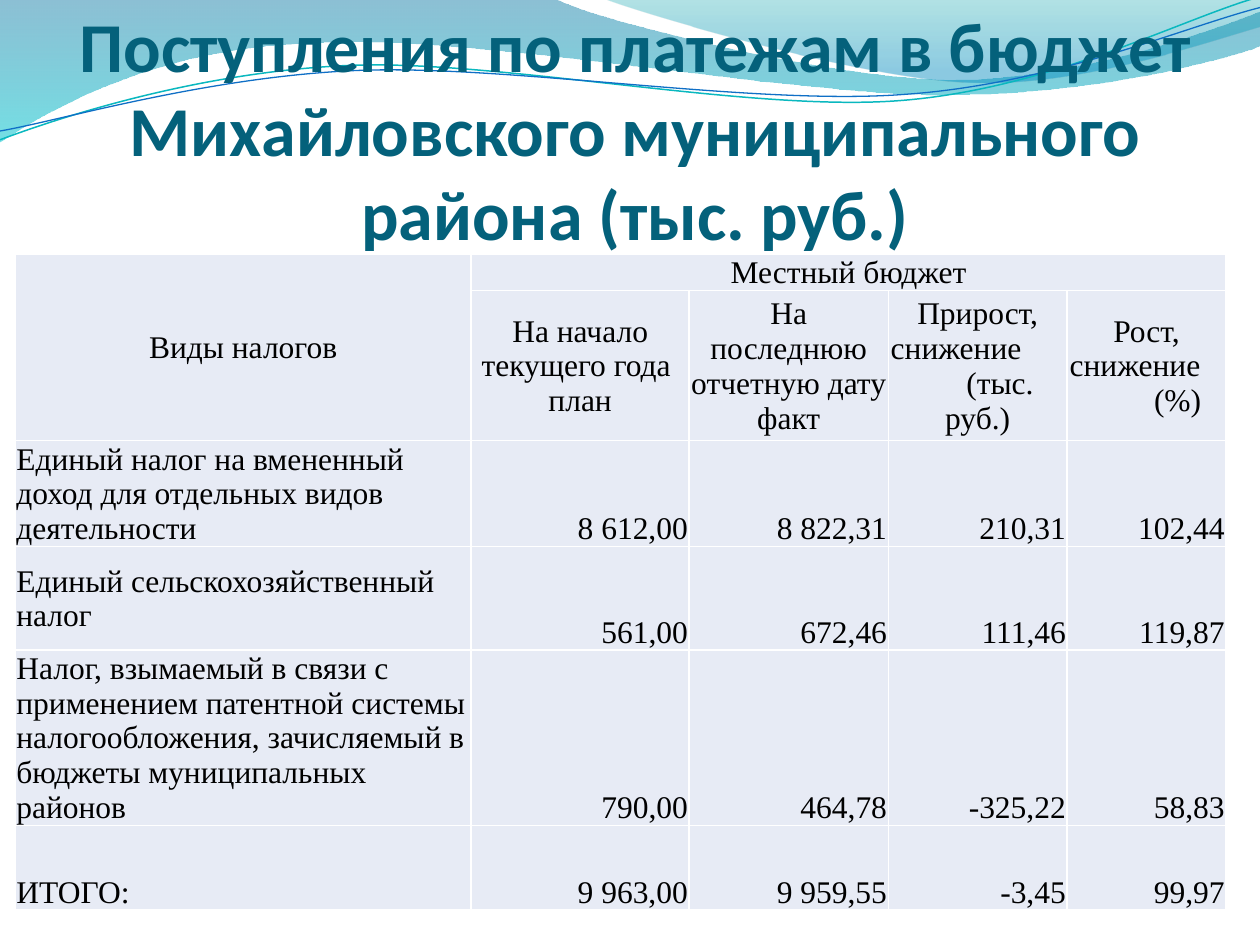
from lxml import etree
from pptx import Presentation
from pptx.dml.color import RGBColor
from pptx.enum.text import MSO_ANCHOR, MSO_AUTO_SIZE, PP_ALIGN
from pptx.oxml.ns import qn
from pptx.util import Inches, Pt

LEFT, CENTER, RIGHT = PP_ALIGN.LEFT, PP_ALIGN.CENTER, PP_ALIGN.RIGHT
MIDDLE, BOTTOM = MSO_ANCHOR.MIDDLE, MSO_ANCHOR.BOTTOM
TITLE_ONLY = 5

COLORS = {
    "title": "04617B", "text": "000000", "cell": "E7EBF5", "border": "FFFFFF",
    "deep_blue": "0074A1", "cyan": "00C6CF", "teal": "00A1A9", "sky": "008BBF",
    "teal_line": "0AB8BF", "blue_line": "0F6FC6",
}

# Each path is a start point followed by lines (2 numbers) and cubic curves (6 numbers).
BACK_WAVE = [
    (0, 0), (4.4, -0.01), (4.76, 0.17, 6.64, 0.63, 7.58, 0.63),
    (8.53, 0.63, 9.58, 0.26, 10, 0.09), (10.01, 0.36),
    (9.83, 0.44, 8.7, 0.76, 7.46, 0.75), (6.22, 0.75, 3.82, 0.28, 2.57, 0.34),
    (1.29, 0.36, 0.46, 0.83, -0.01, 1.13),
]
FRONT_WAVE = [
    (4.79, -0.01), (5.09, 0.11, 6.82, 0.62, 7.69, 0.65),
    (8.56, 0.69, 9.61, 0.32, 10, 0.21), (10, 0),
]
TEAL_LINE = [
    (0, 1.11), (0.48, 0.93, 1.58, 0.57, 2.77, 0.52),
    (3.95, 0.47, 5.93, 0.89, 7.13, 0.8), (8.33, 0.71, 9.38, 0.15, 9.98, -0.02),
]
BLUE_LINE = [
    (0, 1.04), (0.47, 0.96, 1.64, 0.61, 2.83, 0.56),
    (4.03, 0.51, 5.97, 0.84, 7.17, 0.75), (8.36, 0.67, 9.41, 0.21, 10, 0.06),
]

TITLE = "Поступления по платежам в бюджет Михайловского муниципального района (тыс. руб.)"
COLUMN_WIDTHS = [3.62, 1.73, 1.58, 1.42, 1.26]
ROW_HEIGHTS = [0.27, 1.19, 0.54, 0.82, 0.54, 0.67]
HEADER_ROWS = 2
TAXES = [
    ["Виды налогов", "Местный бюджет", "", "", ""],
    ["", "На начало текущего года \nплан", "На последнюю отчетную дату\nфакт",
     "Прирост,\nснижение\n(тыс.\nруб.)", "Рост,\nснижение\n(%)"],
    ["Единый налог на вмененный доход для отдельных видов деятельности",
     "8 612,00", "8 822,31", "210,31", "102,44"],
    ["Единый сельскохозяйственный налог", "561,00", "672,46", "111,46", "119,87"],
    ["Налог, взымаемый в связи с применением патентной системы налогообложения, "
     "зачисляемый в бюджеты муниципальных районов",
     "790,00", "464,78", "-325,22", "58,83"],
    ["ИТОГО:", "9 963,00", "9 959,55", "-3,45", "99,97"],
]
MIDDLE_NAME_ROWS = (3, 4)
HEADER_INDENTS = {"снижение": 0.01, "(тыс.": 0.61, "(%)": 0.68}


def rgb(name):
    return RGBColor.from_string(COLORS[name])


def add_outline(slide, box, path, close):
    """Draw the path through its control points, then turn those corners into curves."""
    left, top = box
    points = [(Inches(left + x), Inches(top + y))
              for segment in path for x, y in zip(segment[::2], segment[1::2])]
    builder = slide.shapes.build_freeform(*points[0])
    builder.add_line_segments(points[1:], close=close)
    outline = builder.convert_to_shape()
    outline.shadow.inherit = False
    corners = iter(list(outline._element.iter(qn("a:lnTo"))))
    for segment in path[1:]:
        first = next(corners)
        if len(segment) == 6:
            first.tag = qn("a:cubicBezTo")
            for corner in (next(corners), next(corners)):
                first.append(corner[0])
                corner.getparent().remove(corner)
    return outline


def add_wave(slide, box, path, stops):
    """Fill a closed path with a top-down gradient of (position, colour, opacity %) stops."""
    wave = add_outline(slide, box, path, True)
    wave.line.fill.background()
    wave.fill.gradient()
    wave.fill.gradient_angle = 270
    for stop, (position, color, _) in zip(wave.fill.gradient_stops, stops):
        stop.position = position
        stop.color.rgb = rgb(color)
    for color_element, (_, _, opacity) in zip(wave._element.spPr.iter(qn("a:srgbClr")), stops):
        etree.SubElement(color_element, qn("a:alpha"), val=str(opacity * 1000))


def add_wave_line(slide, box, path, color, width):
    wave_line = add_outline(slide, box, path, False)
    wave_line.fill.background()
    wave_line.line.color.rgb = rgb(color)
    wave_line.line.width = Pt(width)


def add_wave_band(slide, box):
    add_wave(slide, box, BACK_WAVE, [(0, "deep_blue", 45), (1, "cyan", 55)])
    add_wave(slide, box, FRONT_WAVE, [(0, "teal", 30), (0.8, "sky", 45)])
    add_wave_line(slide, box, TEAL_LINE, "teal_line", 0.85)
    add_wave_line(slide, box, BLUE_LINE, "blue_line", 0.75)


def style_paragraph(paragraph, align, font_name, size, color, bold):
    paragraph.alignment = align
    font = paragraph.font
    font.name, font.size, font.bold = font_name, Pt(size), bold
    font.color.rgb = rgb(color)


def place_title(slide, box):
    title = slide.shapes.title
    title.left, title.top, title.width, title.height = map(Inches, box)
    frame = title.text_frame
    frame.text = TITLE
    frame.word_wrap = True
    frame.auto_size = MSO_AUTO_SIZE.NONE
    frame.vertical_anchor = BOTTOM
    frame.margin_left = frame.margin_right = frame.margin_bottom = 0
    frame.margin_top = Inches(0.05)
    style_paragraph(frame.paragraphs[0], CENTER, "Calibri", 40, "title", True)
    slide.shapes._spTree.append(title._element)  # in front of the waves


def format_cell(cell, text, align, anchor):
    cell.text = text
    cell.vertical_anchor = anchor
    cell.margin_left = cell.margin_right = cell.margin_top = Inches(0.01)
    cell.margin_bottom = 0
    for paragraph in cell.text_frame.paragraphs:
        indent = HEADER_INDENTS.get(paragraph.text)
        line_align = align if indent is None else LEFT
        style_paragraph(paragraph, line_align, "Times New Roman", 18, "text", False)
        if indent is not None:
            paragraph._p.get_or_add_pPr().set("marL", str(Inches(indent)))
    properties = cell._tc.get_or_add_tcPr()
    for side in ("lnL", "lnR", "lnT", "lnB"):
        border = etree.SubElement(properties, qn(f"a:{side}"), w=str(Pt(1)))
        fill = etree.SubElement(border, qn("a:solidFill"))
        etree.SubElement(fill, qn("a:srgbClr"), val=COLORS["border"])
    cell.fill.solid()
    cell.fill.fore_color.rgb = rgb("cell")


def add_tax_table(slide, box):
    table = slide.shapes.add_table(len(TAXES), len(COLUMN_WIDTHS), *map(Inches, box)).table
    table.first_row = table.horz_banding = False
    for column, width in zip(table.columns, COLUMN_WIDTHS):
        column.width = Inches(width)
    for row, height in zip(table.rows, ROW_HEIGHTS):
        row.height = Inches(height)
    for r, values in enumerate(TAXES):
        for c, text in enumerate(values):
            if r < HEADER_ROWS:
                align, anchor = CENTER, MIDDLE
            elif c == 0:
                align, anchor = LEFT, MIDDLE if r in MIDDLE_NAME_ROWS else BOTTOM
            else:
                align, anchor = RIGHT, BOTTOM
            format_cell(table.cell(r, c), text, align, anchor)
    table.cell(0, 0).merge(table.cell(1, 0))
    table.cell(0, 1).merge(table.cell(0, len(COLUMN_WIDTHS) - 1))


def main():
    prs = Presentation()
    prs.slide_width, prs.slide_height = Inches(10), Inches(7.5)
    slide = prs.slides.add_slide(prs.slide_layouts[TITLE_ONLY])
    add_wave_band(slide, (0, 0))
    place_title(slide, (0.5, 0.77, 9.08, 1.25))
    add_tax_table(slide, (0.12, 2.02, sum(COLUMN_WIDTHS), sum(ROW_HEIGHTS)))
    prs.save("out.pptx")


if __name__ == "__main__":
    main()
